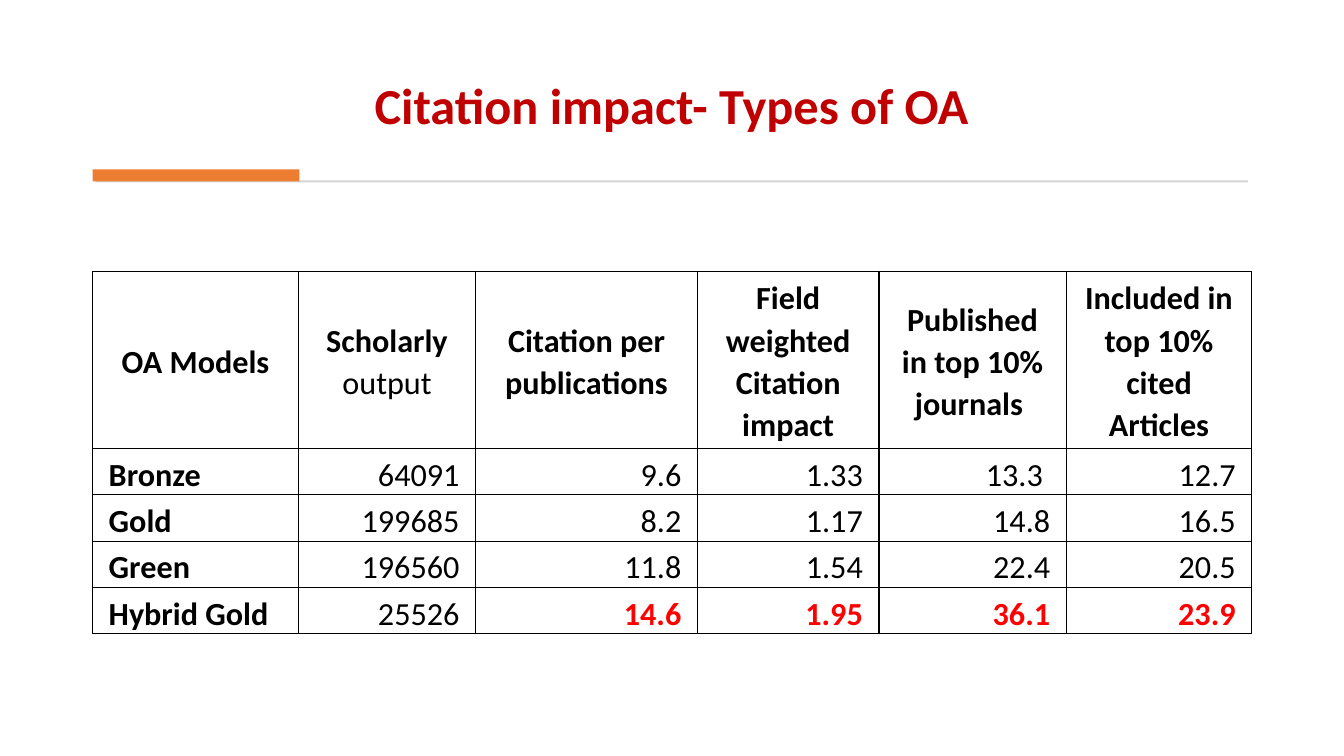
from dataclasses import dataclass

from lxml import etree
from pptx import Presentation
from pptx import util as u
from pptx.dml.color import RGBColor
from pptx.enum import shapes, text
from pptx.oxml import ns


@dataclass(frozen=True)
class Theme:
    font: str = "Calibri"
    title_size: float = 36
    table_size: float = 23
    title: str = "C00000"
    ink: str = "000000"
    highlight: str = "FF0000"
    accent: str = "ED7D31"
    rule: str = "D5D5D5"


class SlideBuilder:
    def __init__(self, page, theme):
        self.page = page
        self.theme = theme

    def add_span(self, para, content, size, color, bold):
        span = para.add_run()
        span.text = content
        span.font.name = self.theme.font
        span.font.size = u.Pt(size)
        span.font.bold = bold
        span.font.color.rgb = RGBColor.from_string(color)

    def title(self, content, left, top, width, height):
        box = self.page.shapes.title
        box.left, box.top, box.width, box.height = map(u.Pt, (left, top, width, height))
        frame = box.text_frame
        frame.word_wrap = True
        frame.auto_size = text.MSO_AUTO_SIZE.NONE
        frame.vertical_anchor = text.MSO_ANCHOR.BOTTOM
        para = frame.paragraphs[0]
        para.alignment = text.PP_ALIGN.CENTER
        para.line_spacing = 0.9
        self.add_span(para, content, self.theme.title_size, self.theme.title, True)

    def bar(self, left, top, width, height, color):
        bar = self.page.shapes.add_shape(
            shapes.MSO_SHAPE.RECTANGLE, *map(u.Pt, (left, top, width, height)))
        bar.shadow.inherit = False
        bar.fill.solid()
        bar.fill.fore_color.rgb = RGBColor.from_string(color)
        bar.line.fill.background()

    def border(self, cell):
        properties = cell._tc.get_or_add_tcPr()
        for side in ("lnL", "lnR", "lnT", "lnB"):
            line = etree.SubElement(properties, ns.qn(f"a:{side}"), w=str(int(u.Pt(1))))
            fill = etree.SubElement(line, ns.qn("a:solidFill"))
            etree.SubElement(fill, ns.qn("a:srgbClr"), val=self.theme.ink)

    def cell(self, cell, anchor, align):
        cell.margin_left = cell.margin_right = u.Pt(11.5)
        cell.margin_top, cell.margin_bottom = u.Pt(1.5), u.Pt(0)
        cell.vertical_anchor = anchor
        self.border(cell)
        cell.fill.background()
        para = cell.text_frame.paragraphs[0]
        para.alignment = align
        para.line_spacing = 1.07
        return para

    def table(self, left, top, widths, heights, headings, records, best):
        frame = self.page.shapes.add_table(
            len(heights), len(widths), *map(u.Pt, (left, top, sum(widths), sum(heights))))
        table = frame.table
        table.first_row = table.horz_banding = False
        for column, width in zip(table.columns, widths):
            column.width = u.Pt(width)
        for row, height in zip(table.rows, heights):
            row.height = u.Pt(height)
        size, ink = self.theme.table_size, self.theme.ink
        for index, spans in enumerate(headings):
            para = self.cell(table.cell(0, index), text.MSO_ANCHOR.MIDDLE,
                             text.PP_ALIGN.CENTER)
            for position, content in enumerate(spans):
                self.add_span(para, content, size, ink, position == 0)
        for row, record in enumerate(records, 1):
            for index, content in enumerate(record):
                marked = record[0] == best and index > 1
                align = text.PP_ALIGN.RIGHT if index else text.PP_ALIGN.LEFT
                color = self.theme.highlight if marked else ink
                para = self.cell(table.cell(row, index), text.MSO_ANCHOR.BOTTOM, align)
                self.add_span(para, content, size, color, marked or index == 0)


HEADINGS = [
    ("OA Models",),
    ("Scholarly ", "output"),
    ("Citation per publications",),
    ("Field weighted Citation impact",),
    ("Published in top 10% journals ",),
    ("Included in top 10% cited Articles",),
]
RECORDS = [
    ("Bronze", "64091", "9.6", "1.33", "13.3 ", "12.7"),
    ("Gold", "199685", "8.2", "1.17", "14.8", "16.5"),
    ("Green", "196560", "11.8", "1.54", "22.4", "20.5"),
    ("Hybrid Gold", "25526", "14.6", "1.95", "36.1", "23.9"),
]


def main():
    deck = Presentation()
    deck.slide_width, deck.slide_height = u.Pt(960), u.Pt(540)
    page = deck.slides.add_slide(deck.slide_layouts[5])
    theme = Theme()
    builder = SlideBuilder(page, theme)
    left = 66.2
    builder.title("Citation impact- Types of OA", left, 20.2, 827.3, 79.9)
    builder.bar(68.4, 128.9, 823, 1.4, theme.rule)
    builder.bar(left, 121, 147.6, 8.6, theme.accent)
    builder.table(left, 193.7, [147, 126.7, 158.4, 129.6, 133.9, 132.5],
                  [126.7] + [33.1] * len(RECORDS), HEADINGS, RECORDS, "Hybrid Gold")
    deck.save("out.pptx")


if __name__ == "__main__":
    main()
